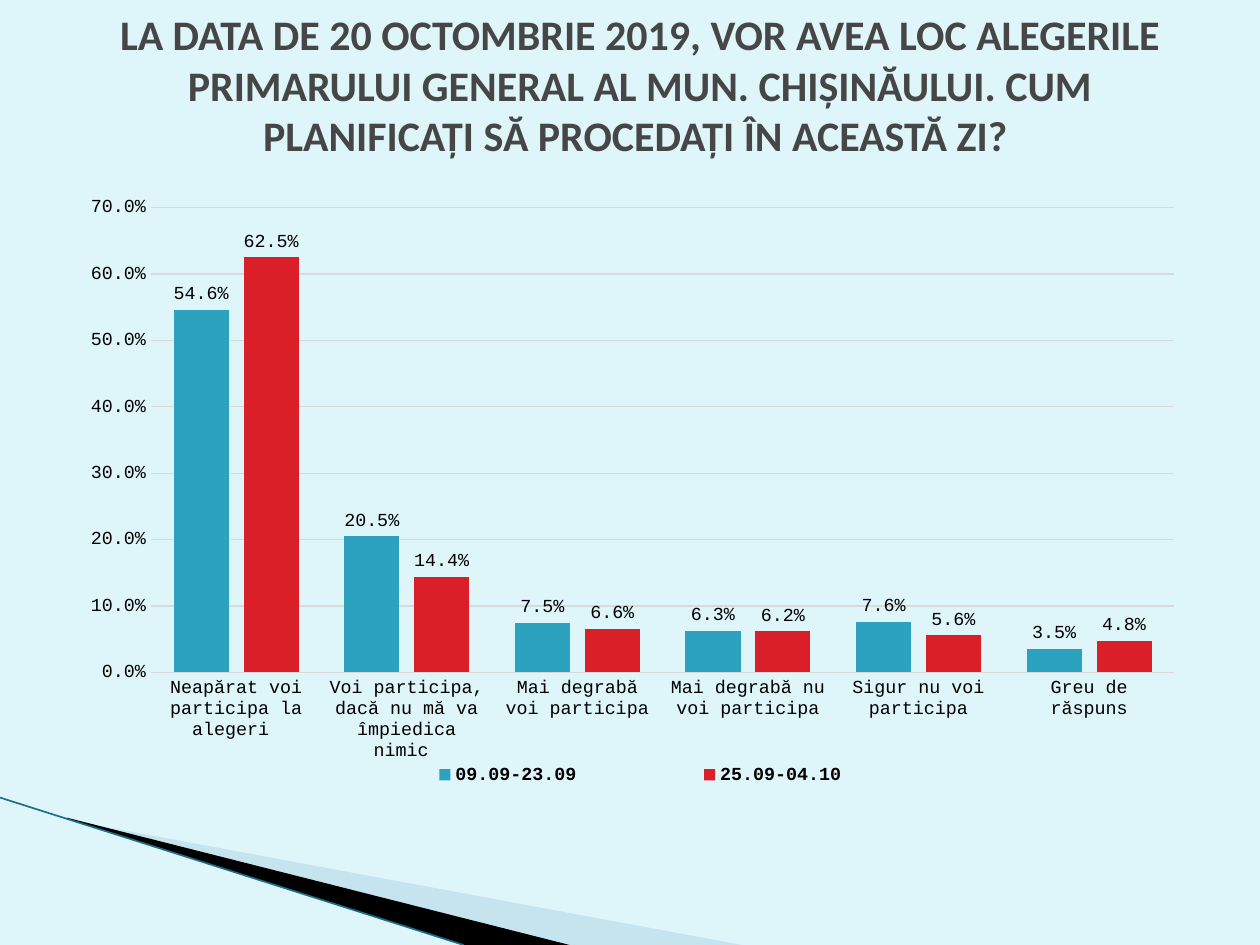
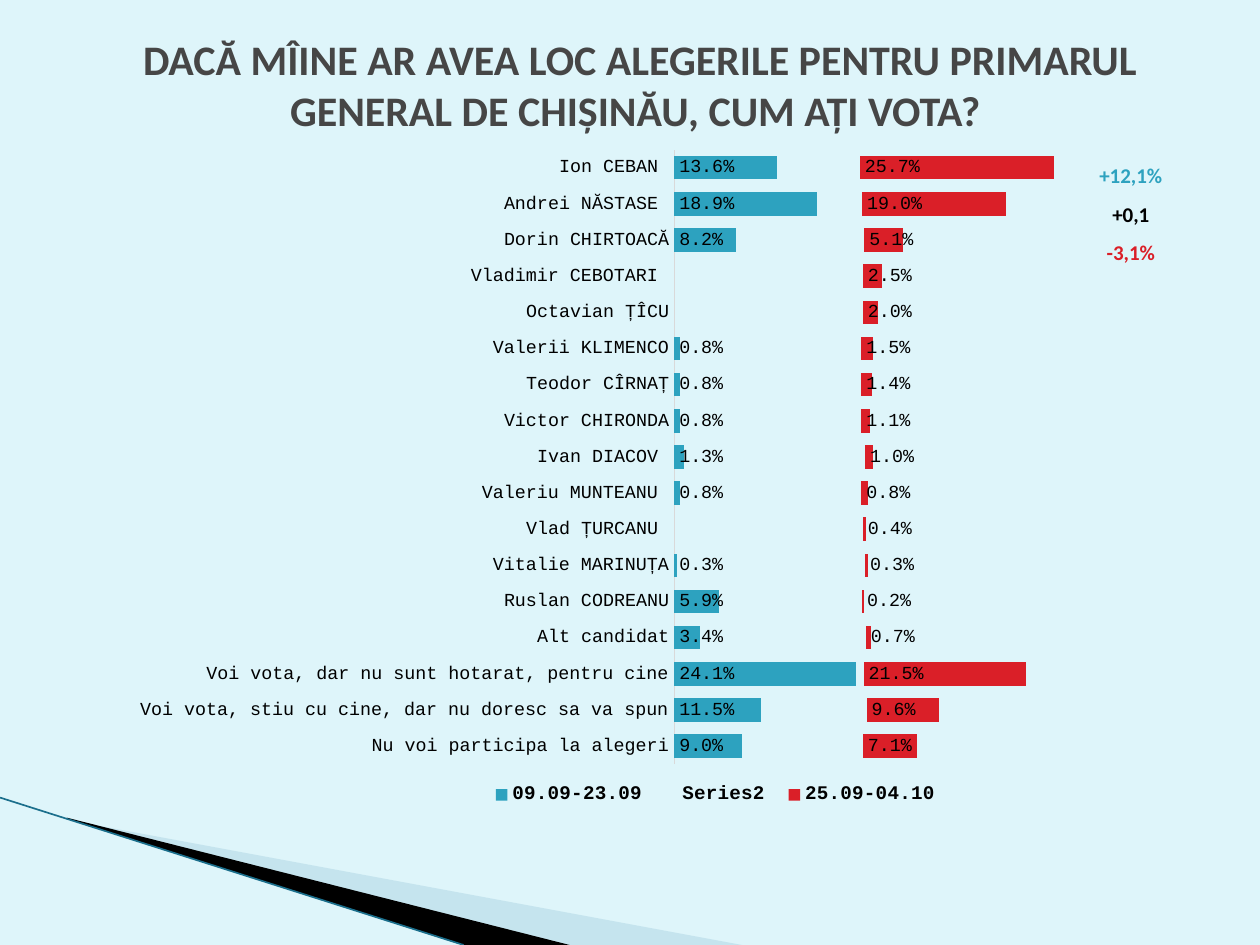
from lxml import etree
from pptx import Presentation
from pptx import util as u
from pptx.chart.data import CategoryChartData
from pptx.dml.color import RGBColor
from pptx.enum import chart as ch
from pptx.enum import lang, shapes, text
from pptx.oxml import ns

WIDE, HIGH = u.Inches(10), u.Inches(7.5)
SKY, TEAL, RED, INK = "DEF5FA", "2DA2BF", "DA1F28", "000000"
GREY, RULE, MIST, EDGE = "464646", "D9D9D9", "A0CBDC", "1B6F8C"
SANS, MONO = "Calibri", "Courier New"
OLD, GAP, NEW = "09.09-23.09", "Series2", "25.09-04.10"
NO_GRID = "{2D5ABB26-0587-4C30-8999-92F81FD0307C}"
WEDGES = [
    (MIST, 40, [(5.5, 86.8), (58.9, 100), (45.2, 100), (5.5, 86.67)]),
    (INK, 100, [(5.3, 86.53), (45.2, 100), (36.7, 100), (5.4, 86.67)]),
]
TURNOUT = [
    ("Neapărat voi participa la alegeri ", 0.546, 0.625),
    ("Voi participa, dacă nu mă va împiedica nimic ", 0.205, 0.144),
    ("Mai degrabă voi participa", 0.075, 0.066),
    ("Mai degrabă nu voi participa", 0.063, 0.062),
    ("Sigur nu voi participa", 0.076, 0.056),
    ("Greu de răspuns", 0.035, 0.048),
]
VOTES = [
    ("Nu voi participa la alegeri", 0.09, 0.071),
    ("Voi vota, stiu cu cine, dar nu doresc sa va spun", 0.115, 0.096),
    ("Voi vota, dar nu sunt hotarat, pentru cine", 0.241, 0.215),
    ("Alt candidat", 0.034, 0.007),
    ("Ruslan CODREANU", 0.059, 0.002),
    ("Vitalie MARINUȚA", 0.003, 0.003),
    ("Vlad ȚURCANU ", None, 0.004),
    ("Valeriu MUNTEANU ", 0.008, 0.008),
    ("Ivan DIACOV ", 0.013, 0.01),
    ("Victor CHIRONDA", 0.008, 0.011),
    ("Teodor CÎRNAȚ", 0.008, 0.014),
    ("Valerii KLIMENCO", 0.008, 0.015),
    ("Octavian ȚÎCU", None, 0.02),
    ("Vladimir CEBOTARI ", None, 0.025),
    ("Dorin CHIRTOACĂ", 0.082, 0.051),
    ("Andrei NĂSTASE ", 0.189, 0.19),
    ("Ion CEBAN ", 0.136, 0.257),
]
SHIFTS = [("+12,1%", TEAL), ("+0,1", INK), ("-3,1%", RED)]


def tint(code):
    """Turn a hex string into a colour."""
    return RGBColor.from_string(code)


def spot(x, y):
    """Turn percentages of the slide into a point."""
    return int(WIDE * x / 100), int(HIGH * y / 100)


def area(x, y, w, h):
    """Turn percentages of the slide into a box."""
    return *spot(x, y), *spot(w, h)


def style(font, size, code=INK, bold=False, face=MONO):
    """Format a font."""
    font.name, font.size, font.bold = face, u.Pt(size), bold
    font.color.rgb = tint(code)


def rule(line, code, width):
    """Format a line."""
    line.color.rgb = tint(code)
    line.width = u.Pt(width)


def wedge(slide, code, alpha, points):
    """Draw one wedge of the corner."""
    first, *rest = [spot(*point) for point in points]
    pen = slide.shapes.build_freeform(*first)
    pen.add_line_segments(rest)
    shape = pen.convert_to_shape()
    shape.shadow.inherit = False
    shape.line.fill.background()
    shape.fill.solid()
    shape.fill.fore_color.rgb = tint(code)
    if alpha < 100:
        hue = shape._element.spPr.find(".//" + ns.qn("a:srgbClr"))
        etree.SubElement(hue, ns.qn("a:alpha")).set("val", str(alpha * 1000))


def corner(slide):
    """Draw the wedges and the edge at lower left."""
    for item in WEDGES:
        wedge(slide, *item)
    edge = slide.shapes.add_connector(
        shapes.MSO_CONNECTOR.STRAIGHT, *spot(0, 84.4), *spot(36.8, 100))
    rule(edge.line, EDGE, 0.95)
    etree.SubElement(edge._element.spPr, ns.qn("a:effectLst"))


def page(deck, title):
    """Add a slide with its corner and title."""
    slide = deck.slides.add_slide(deck.slide_layouts[5])
    corner(slide)
    head = slide.shapes.title
    head.left, head.top, head.width, head.height = area(5.8, 3.38, 90, 11.07)
    frame = head.text_frame
    frame.text = title
    frame.word_wrap = True
    frame.auto_size = text.MSO_AUTO_SIZE.NONE
    frame.vertical_anchor = text.MSO_ANCHOR.MIDDLE
    para = frame.paragraphs[0]
    para.alignment = text.PP_ALIGN.CENTER
    font = para.runs[0].font
    style(font, 24, GREY, True, SANS)
    font.language_id = lang.MSO_LANGUAGE_ID.ROMANIAN
    return slide


def place(node, index, spots, inner=False):
    """Fix a chart part at shares of the chart's box."""
    for old in node.findall(ns.qn("c:layout")):
        node.remove(old)
    outer = etree.Element(ns.qn("c:layout"))
    node.insert(index, outer)
    box = etree.SubElement(outer, ns.qn("c:manualLayout"))
    pairs = [("layoutTarget", "inner")] if inner else []
    pairs += [("xMode", "edge"), ("yMode", "edge"), *zip("xywh", spots)]
    for tag, value in pairs:
        etree.SubElement(box, ns.qn("c:" + tag)).set("val", str(value))


def graph(slide, box, kind, names, rows, hues, where):
    """Add a styled bar chart with labels on its filled series."""
    data = CategoryChartData(number_format="0.0%")
    data.categories = [row[0] for row in rows]
    for index, name in enumerate(names, 1):
        data.add_series(name, [row[index] for row in rows])
    chart = slide.shapes.add_chart(kind, *area(*box), data).chart
    style(chart.font, 10.5)
    chart.has_title = False
    chart.plots[0].vary_by_categories = False
    for series, hue in zip(chart.plots[0].series, hues):
        if not hue:
            series.format.fill.background()
            continue
        series.format.fill.solid()
        series.format.fill.fore_color.rgb = tint(hue)
        tags = series.data_labels
        tags.show_value = True
        tags.number_format, tags.number_format_is_linked = "0.0%", False
        tags.position = where
        style(tags.font, 10.5)
    axis = chart.category_axis
    axis.major_tick_mark = ch.XL_TICK_MARK.NONE
    style(axis.tick_labels.font, 10.5)
    rule(axis.format.line, RULE, 0.75)
    return chart


def scale(chart, top):
    """Set the range of the value axis."""
    axis = chart.value_axis
    axis.minimum_scale, axis.maximum_scale = 0, top
    axis.major_unit = 0.1
    axis.major_tick_mark = ch.XL_TICK_MARK.NONE
    return axis


def frame(chart, plot, key, size):
    """Place the plot and the legend."""
    chart.has_legend = True
    chart.legend.position = ch.XL_LEGEND_POSITION.BOTTOM
    chart.legend.include_in_layout = False
    style(chart.legend.font, size, bold=True)
    root = chart._chartSpace
    place(root.find(".//" + ns.qn("c:plotArea")), 0, plot, True)
    place(root.find(".//" + ns.qn("c:legend")), 1, key)


def turnout(slide, box):
    """Chart the plans to take part as columns."""
    chart = graph(slide, box, ch.XL_CHART_TYPE.COLUMN_CLUSTERED, (OLD, NEW),
                  TURNOUT, (TEAL, RED), ch.XL_LABEL_POSITION.OUTSIDE_END)
    chart.plots[0].gap_width, chart.plots[0].overlap = 83, -27
    axis = scale(chart, 0.7)
    axis.format.line.fill.background()
    rule(axis.major_gridlines.format.line, RULE, 0.75)
    axis.tick_labels.number_format = "0.0%"
    axis.tick_labels.number_format_is_linked = False
    style(axis.tick_labels.font, 10.5)
    frame(chart, (0.07, 0.03, 0.92, 0.75), (0.22, 0.92, 0.58, 0.05), 10.5)


def votes(slide, box):
    """Chart the votes as two bar columns split by a clear series."""
    rows = [(name, old, round(0.25 - (old or 0), 2), new)
            for name, old, new in VOTES]
    chart = graph(slide, box, ch.XL_CHART_TYPE.BAR_STACKED, (OLD, GAP, NEW),
                  rows, (TEAL, None, RED), ch.XL_LABEL_POSITION.INSIDE_BASE)
    chart.plots[0].gap_width, chart.plots[0].overlap = 54, 100
    axis = scale(chart, 0.6)
    axis.has_major_gridlines = False
    axis.visible = False
    frame(chart, (0.54, 0.02, 0.44, 0.9), (0.35, 0.94, 0.46, 0.05), 11)


def changes(slide, box):
    """List the changes in a table with no grid."""
    table = slide.shapes.add_table(len(SHIFTS), 1, *area(*box)).table
    table.first_row = table.horz_banding = False
    table._tbl.tblPr.find(ns.qn("a:tableStyleId")).text = NO_GRID
    for index, (words, hue) in enumerate(SHIFTS):
        cell = table.cell(index, 0)
        cell.text = words
        cell.fill.background()
        cell.vertical_anchor = text.MSO_ANCHOR.MIDDLE
        para = cell.text_frame.paragraphs[0]
        para.alignment = text.PP_ALIGN.CENTER
        style(para.runs[0].font, 12, hue, True, SANS)


def main():
    """Build and save the deck."""
    deck = Presentation()
    deck.slide_width, deck.slide_height = WIDE, HIGH
    back = deck.slide_master.background.fill
    back.solid()
    back.fore_color.rgb = tint(SKY)
    slide = page(deck, "LA DATA DE 20 OCTOMBRIE 2019, VOR AVEA LOC ALEGERILE "
                 "PRIMARULUI GENERAL AL MUN. CHIŞINĂULUI. CUM PLANIFICAŢI "
                 "SĂ PROCEDAŢI ÎN ACEASTĂ ZI? ")
    turnout(slide, (5.8, 20, 88.3, 65.6))
    slide = page(deck, "DACĂ MÎINE AR AVEA LOC ALEGERILE PENTRU PRIMARUL "
                 "GENERAL DE CHIŞINĂU, CUM AŢI VOTA? ")
    changes(slide, (85.15, 16.6, 9.2, 12.3))
    votes(slide, (9.4, 14.4, 81.7, 72.27))
    deck.save("out.pptx")


if __name__ == "__main__":
    main()
